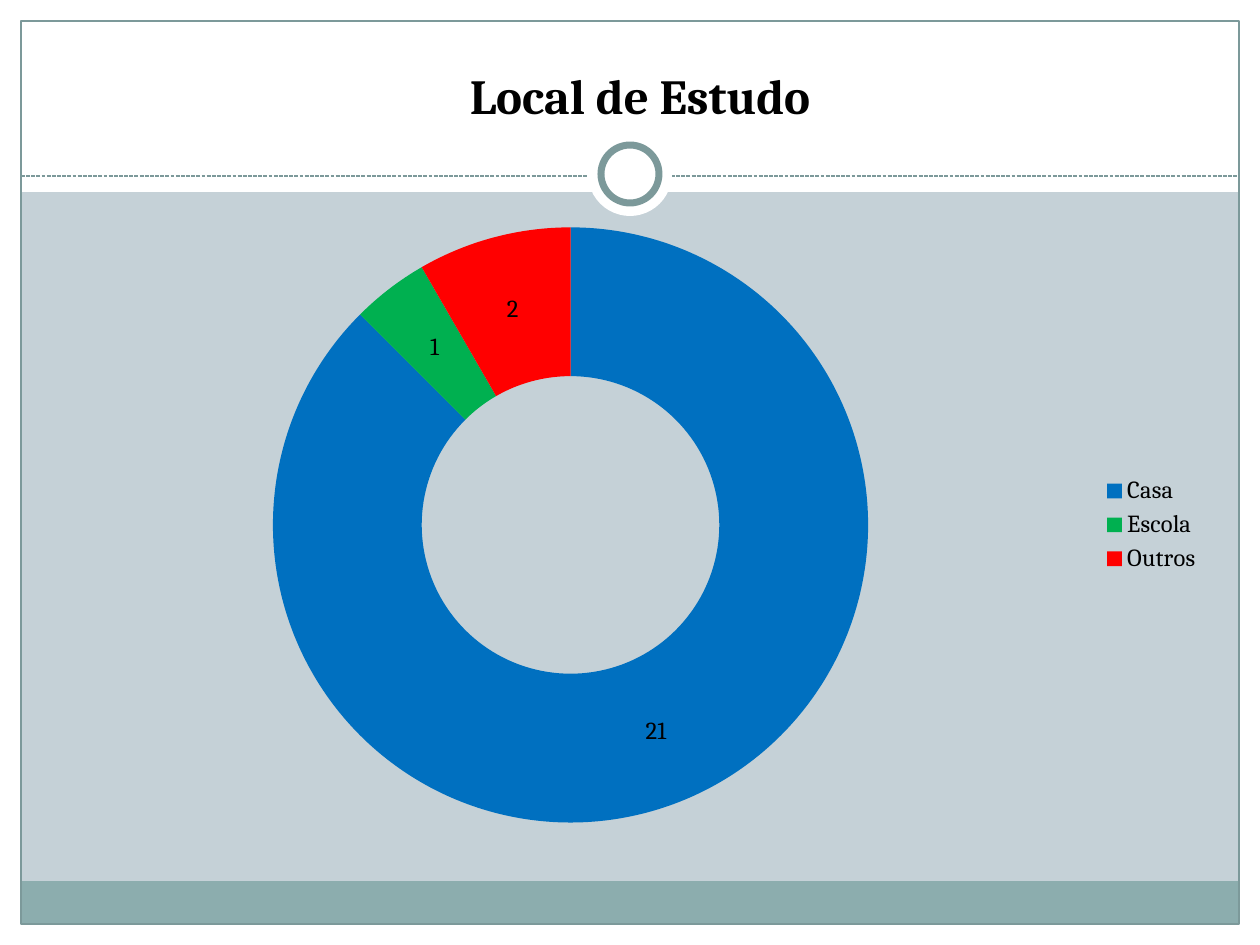
from lxml.etree import SubElement
from pptx import Presentation
from pptx.chart.data import CategoryChartData
from pptx.dml.color import RGBColor
from pptx.enum.chart import XL_CHART_TYPE, XL_LEGEND_POSITION
from pptx.enum.dml import MSO_LINE
from pptx.enum.shapes import MSO_CONNECTOR, MSO_SHAPE
from pptx.enum.text import MSO_ANCHOR, MSO_AUTO_SIZE, PP_ALIGN
from pptx.oxml.ns import qn
from pptx.util import Emu, Pt

WIDTH, HEIGHT = 1260, 945
MARGIN = 21
HEADER = 192


def px(length):
    return Emu(round(length * 914400 / 126))


def color(hex_string):
    return RGBColor.from_string(hex_string)


class SlideBuilder:
    font = "Cambria"
    ink = "000000"
    paper = "FFFFFF"
    backdrop = "C5D1D7"
    band = "8CADAE"
    edge = "7C999A"

    def __init__(self, slide):
        self.slide = slide
        slide.background.fill.solid()
        slide.background.fill.fore_color.rgb = color(self.backdrop)

    def shape(self, kind, left, top, width, height, fill=None, line_width=None):
        shape = self.slide.shapes.add_shape(
            kind, px(left), px(top), px(width), px(height))
        shape.shadow.inherit = False
        if fill:
            shape.fill.solid()
            shape.fill.fore_color.rgb = color(fill)
        else:
            shape.fill.background()
        if line_width:
            shape.line.color.rgb = color(self.edge)
            shape.line.width = Pt(line_width)
        else:
            shape.line.fill.background()

    def circle(self, center_x, center_y, diameter, line_width=None):
        self.shape(MSO_SHAPE.OVAL, center_x - diameter / 2,
                   center_y - diameter / 2, diameter, diameter,
                   self.paper, line_width)

    def dashed_rule(self, left, right, y):
        rule = self.slide.shapes.add_connector(
            MSO_CONNECTOR.STRAIGHT, px(left), px(y), px(right), px(y))
        rule.line.color.rgb = color(self.edge)
        rule.line.width = Pt(0.75)
        rule.line.dash_style = MSO_LINE.SQUARE_DOT
        # The preset named "square dot" is sysDot, so choose the short dash
        rule.line._ln.find(qn("a:prstDash")).set("val", "sysDash")
        SubElement(rule._element.spPr, qn("a:effectLst"))

    def style_font(self, font, size, bold=False):
        font.name = self.font
        font.size = Pt(size)
        font.bold = bold
        font.color.rgb = color(self.ink)

    def title(self, text, left, top, width, height):
        box = self.slide.shapes.add_textbox(
            px(left), px(top), px(width), px(height))
        frame = box.text_frame
        frame.word_wrap = True
        frame.auto_size = MSO_AUTO_SIZE.SHAPE_TO_FIT_TEXT
        frame.vertical_anchor = MSO_ANCHOR.TOP
        frame.text = text
        para = frame.paragraphs[0]
        para.alignment = PP_ALIGN.CENTER
        self.style_font(para.runs[0].font, 28, bold=True)

    def doughnut(self, slices, left, top, width, height):
        data = CategoryChartData()
        data.categories = [name for name, _, _ in slices]
        data.add_series("Series 1", [value for _, value, _ in slices])
        chart = self.slide.shapes.add_chart(
            XL_CHART_TYPE.DOUGHNUT, px(left), px(top), px(width), px(height),
            data).chart
        chart.has_title = False
        self.style_font(chart.font, 10)

        chart.has_legend = True
        chart.legend.position = XL_LEGEND_POSITION.RIGHT
        chart.legend.include_in_layout = False
        self.style_font(chart.legend.font, 14)

        plot = chart.plots[0]
        plot.vary_by_categories = True
        plot._element.find(qn("c:holeSize")).set("val", "50")
        series = plot.series[0]
        for index, (_, _, fill) in enumerate(slices):
            point = series.points[index].format
            point.fill.solid()
            point.fill.fore_color.rgb = color(fill)
            point.line.fill.background()
        labels = series.data_labels
        labels.show_value = True
        labels.show_percentage = False
        self.style_font(labels.font, 14)


def main():
    deck = Presentation()
    deck.slide_width, deck.slide_height = px(WIDTH), px(HEIGHT)
    page = SlideBuilder(deck.slides.add_slide(deck.slide_layouts[6]))

    # White margins and header
    for area in (
        (0, HEIGHT - MARGIN, WIDTH, MARGIN),
        (0, 0, WIDTH, HEADER),
        (0, 0, MARGIN, HEIGHT),
        (WIDTH - MARGIN, 0, MARGIN, HEIGHT),
    ):
        page.shape(MSO_SHAPE.RECTANGLE, *area, fill=page.paper)

    # Footer band and frame
    inner_width = WIDTH - 2 * MARGIN
    page.shape(MSO_SHAPE.RECTANGLE, MARGIN, 881, inner_width, 43, page.band)
    page.shape(MSO_SHAPE.RECTANGLE, MARGIN, MARGIN, inner_width,
               HEIGHT - 2 * MARGIN, line_width=0.75)

    # Dashed rule with ring
    page.dashed_rule(MARGIN, WIDTH - MARGIN, 176)
    page.circle(WIDTH / 2, 174, 84)
    page.circle(WIDTH / 2, 174, 58, line_width=4)

    # Chart and title
    page.doughnut(
        [("Casa", 21, "0070C0"), ("Escola", 1, "00B050"), ("Outros", 2, "FF0000")],
        42, 210, 1172, 630)
    page.title("Local de Estudo", 325, 59, 630, 72)

    deck.save("out.pptx")


if __name__ == "__main__":
    main()
